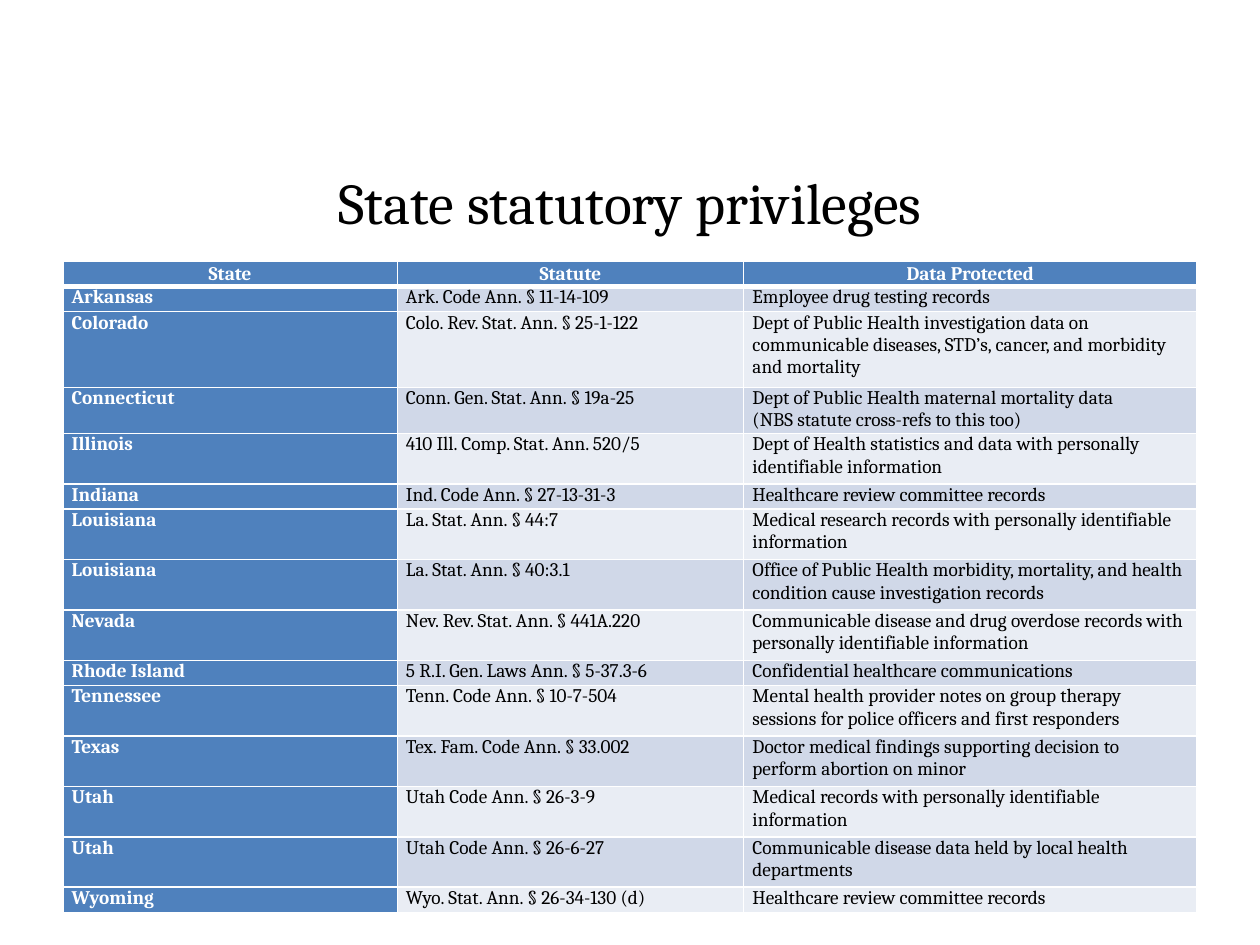
from typing import NamedTuple

from lxml import etree
from pptx import Presentation
from pptx.dml.color import RGBColor
from pptx.enum.text import MSO_ANCHOR, PP_ALIGN
from pptx.oxml.ns import qn
from pptx.util import Pt

CENTER, LEFT = PP_ALIGN.CENTER, PP_ALIGN.LEFT
MIDDLE, TOP = MSO_ANCHOR.MIDDLE, MSO_ANCHOR.TOP

WHITE = RGBColor(0xFF, 0xFF, 0xFF)
BLACK = RGBColor(0x00, 0x00, 0x00)
BLUE = RGBColor(0x4F, 0x81, 0xBD)
BANDS = (RGBColor(0xE9, 0xED, 0xF4), RGBColor(0xD0, 0xD8, 0xE8))

FONT = "Cambria"
LINE_HEIGHT = 14.4
COLUMN_WIDTHS = (191, 198, 259)


class Privilege(NamedTuple):
    state: str
    statute: str
    data: str
    lines: int = 1


class CellStyle(NamedTuple):
    fill: RGBColor
    color: RGBColor
    bold: bool
    align: PP_ALIGN = LEFT
    anchor: MSO_ANCHOR = TOP


HEADER = Privilege("State", "Statute", "Data Protected")
PRIVILEGES = (
    Privilege("Arkansas", "Ark. Code Ann. § 11-14-109", "Employee drug testing records"),
    Privilege("Colorado", "Colo. Rev. Stat. Ann. § 25-1-122",
              "Dept of Public Health investigation data on communicable diseases, "
              "STD’s, cancer, and morbidity and mortality", 3),
    # The second paragraph makes this row grow beyond its set height
    Privilege("Connecticut", "Conn. Gen. Stat. Ann. § 19a-25",
              "Dept of Public Health maternal mortality data\n"
              "(NBS statute cross-refs to this too)"),
    Privilege("Illinois", "410 Ill. Comp. Stat. Ann. 520/5",
              "Dept of Health statistics and data with personally identifiable information", 2),
    Privilege("Indiana", "Ind. Code Ann. § 27-13-31-3", "Healthcare review committee records"),
    Privilege("Louisiana", "La. Stat. Ann. § 44:7",
              "Medical research records with personally identifiable information", 2),
    Privilege("Louisiana", "La. Stat. Ann. § 40:3.1",
              "Office of Public Health morbidity, mortality, and health condition "
              "cause investigation records", 2),
    Privilege("Nevada", "Nev. Rev. Stat. Ann. § 441A.220",
              "Communicable disease and drug overdose records with personally "
              "identifiable information", 2),
    Privilege("Rhode Island", "5 R.I. Gen. Laws Ann. § 5-37.3-6",
              "Confidential healthcare communications"),
    Privilege("Tennessee", "Tenn. Code Ann. § 10-7-504",
              "Mental health provider notes on group therapy sessions for police "
              "officers and first responders", 2),
    Privilege("Texas", "Tex. Fam. Code Ann. § 33.002",
              "Doctor medical findings supporting decision to perform abortion on minor", 2),
    Privilege("Utah", "Utah Code Ann. § 26-3-9",
              "Medical records with personally identifiable information", 2),
    Privilege("Utah", "Utah Code Ann. § 26-6-27",
              "Communicable disease data held by local health departments", 2),
    Privilege("Wyoming", "Wyo. Stat. Ann. § 26-34-130 (d)",
              "Healthcare review committee records"),
)


def format_text(frame, size: float, color: RGBColor, bold: bool, align: PP_ALIGN) -> None:
    for paragraph in frame.paragraphs:
        paragraph.alignment = align
        for span in paragraph.runs:
            span.font.name = FONT
            span.font.size = Pt(size)
            span.font.bold = bold
            span.font.color.rgb = color


def set_borders(cell, top: float, bottom: float) -> None:
    properties = cell._tc.get_or_add_tcPr()
    for side, width in (("L", 1), ("R", 1), ("T", top), ("B", bottom)):
        line = etree.SubElement(properties, qn(f"a:ln{side}"), w=str(Pt(width)))
        fill = etree.SubElement(line, qn("a:solidFill"))
        etree.SubElement(fill, qn("a:srgbClr"), val=str(WHITE))


def fill_cell(cell, text: str, row: int, style: CellStyle) -> None:
    cell.text_frame.text = text
    format_text(cell.text_frame, 11, style.color, style.bold, style.align)
    cell.vertical_anchor = style.anchor
    cell.margin_left = cell.margin_right = Pt(5)
    cell.margin_top = cell.margin_bottom = Pt(0)
    # The thick rule lies between the header and the first state
    set_borders(cell, top=3 if row == 1 else 1, bottom=3 if row == 0 else 1)
    cell.fill.solid()
    cell.fill.fore_color.rgb = style.fill


def cell_style(row: int, column: int) -> CellStyle:
    if row == 0:
        return CellStyle(BLUE, WHITE, True, CENTER, MIDDLE)
    if column == 0:
        return CellStyle(BLUE, WHITE, True)
    return CellStyle(BANDS[row % 2], BLACK, False)


def add_title(page, text: str) -> None:
    box = page.shapes.add_textbox(Pt(36), Pt(70), Pt(648), Pt(90))
    frame = box.text_frame
    frame.word_wrap = True
    frame.vertical_anchor = MIDDLE
    frame.text = text
    format_text(frame, 33, BLACK, False, CENTER)


def add_privilege_table(page) -> None:
    entries = (HEADER, *PRIVILEGES)
    height = LINE_HEIGHT * sum(entry.lines for entry in entries)
    table = page.shapes.add_table(len(entries), len(COLUMN_WIDTHS), Pt(36), Pt(149.3),
                                  Pt(sum(COLUMN_WIDTHS)), Pt(height)).table
    table.horz_banding = False
    for column, width in zip(table.columns, COLUMN_WIDTHS):
        column.width = Pt(width)
    for row, entry in enumerate(entries):
        table.rows[row].height = Pt(LINE_HEIGHT * entry.lines)
        for column, text in enumerate((entry.state, entry.statute, entry.data)):
            fill_cell(table.cell(row, column), text, row, cell_style(row, column))


def main() -> None:
    deck = Presentation()
    deck.slide_width, deck.slide_height = Pt(720), Pt(540)
    page = deck.slides.add_slide(deck.slide_layouts[6])
    add_title(page, "State statutory privileges")
    add_privilege_table(page)
    deck.save("out.pptx")


if __name__ == "__main__":
    main()
